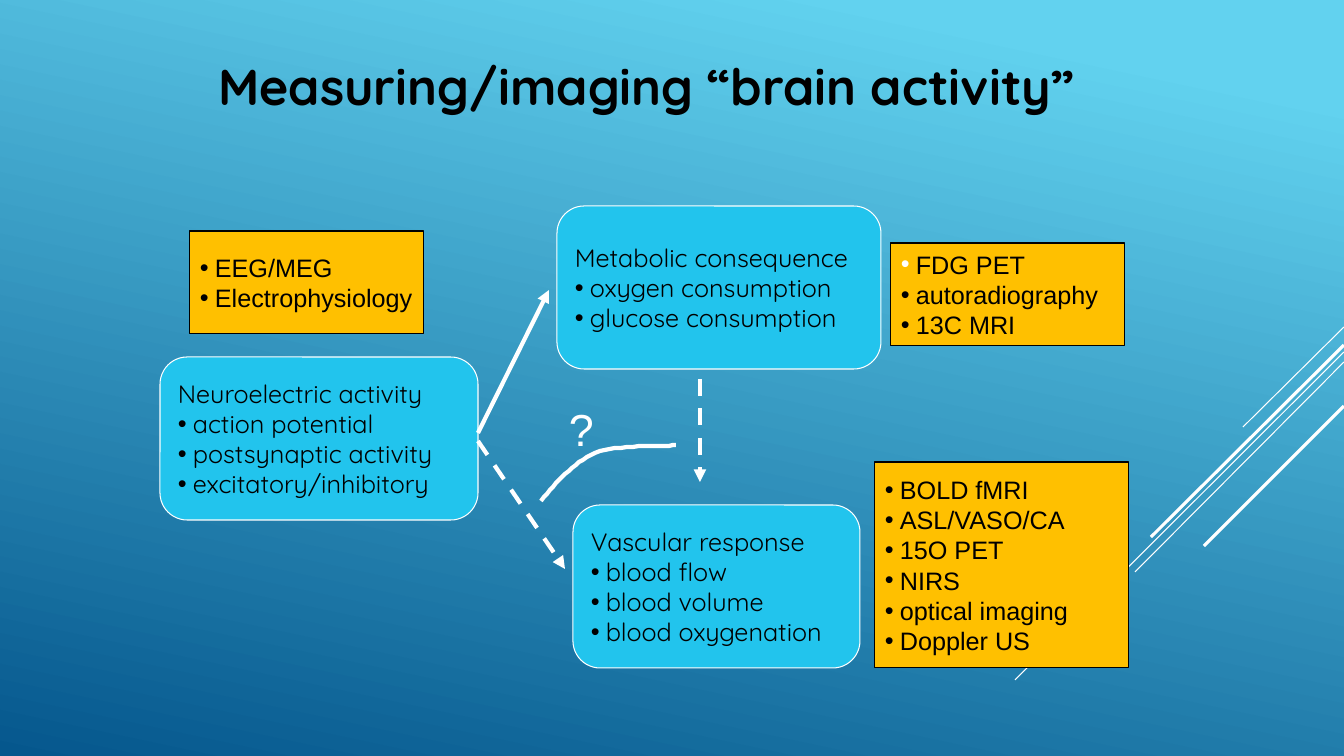
from lxml import etree
from pptx import Presentation
from pptx import util as u
from pptx.dml.color import RGBColor
from pptx.enum import dml, shapes, text
from pptx.oxml.ns import qn

EMU_PER_PX = 12192000 / 1344
COLORS = {"sky": "62D2EF", "deep": "05578D", "process": "22C4ED",
          "method": "FFC000", "black": "000000", "white": "FFFFFF"}
rgb = {name: RGBColor.from_string(value) for name, value in COLORS.items()}


def px(*lengths):
    return [u.Emu(round(n * EMU_PER_PX)) for n in lengths]


def draw_line(ends, width, dashed=False, arrow=False):
    link = slide.shapes.add_connector(shapes.MSO_CONNECTOR.STRAIGHT, *px(*ends))
    link.line.color.rgb = rgb["white"]
    link.line.width = u.Pt(width)
    if dashed:
        link.line.dash_style = dml.MSO_LINE.DASH
    if arrow:
        etree.SubElement(link.line._get_or_add_ln(), qn("a:tailEnd"), type="triangle")
    etree.SubElement(link._element.spPr, qn("a:effectLst"))


prs = Presentation()
prs.slide_width, prs.slide_height = px(1344, 756)
slide = prs.slides.add_slide(prs.slide_layouts[6])

backdrop = slide.background.fill
backdrop.gradient()
backdrop.gradient_angle = 258
for stop, position, name in zip(backdrop.gradient_stops, (0.1, 1), ("sky", "deep")):
    stop.position = position
    stop.color.rgb = rgb[name]

for *ends, width in [
    (1344, 327, 1243, 427, 0.75),
    (1344, 352, 1015, 680, 0.75),
    (1344, 362, 1135, 572, 0.75),
    (1344, 345, 1151, 537, 2.25),
    (1344, 406, 1204, 546, 2.25),
]:
    draw_line(ends, width)

bend_start = (541, 501)
bends = [
    (bend_start, (556, 482), (573, 463), (595, 453)),
    ((595, 453), (618, 444), (662, 447), (676, 445)),
]
bend_points = []
for a, b, c, d in bends:
    for step in range(1, 17):
        t = step / 16
        s = 1 - t
        bend_points.append([s**3 * a[i] + 3 * s * s * t * b[i] + 3 * s * t * t * c[i] + t**3 * d[i]
                            for i in (0, 1)])
builder = slide.shapes.build_freeform(*bend_start, scale=EMU_PER_PX)
builder.add_line_segments(bend_points, close=False)
coupling = builder.convert_to_shape()
coupling.shadow.inherit = False
coupling.fill.background()
coupling.line.color.rgb = rgb["white"]
coupling.line.width = u.Pt(3)

for place, words, font, size, color, bold in [
    ((79, 50, 1084, 57), "Measuring/imaging “brain activity”", "Quicksand", 36, "black", True),
    ((559, 397, 45, 64), "?", "Arial", 32, "white", False),
]:
    label = slide.shapes.add_textbox(*px(*place)).text_frame
    label.word_wrap = True
    label.text = words
    line = label.paragraphs[0]
    line.font.name, line.font.size, line.font.bold = font, u.Pt(size), bold
    line.font.color.rgb = rgb[color]
    if bold:
        line.alignment = text.PP_ALIGN.CENTER
        line._p.get_or_add_pPr().set("marL", str(u.Inches(0.5)))

boxes = [
    ((160, 357, 318, 163), "Neuroelectric activity",
     ["action potential", "postsynaptic activity", "excitatory/inhibitory"]),
    ((573, 505, 287, 163), "Vascular response",
     ["blood flow", "blood volume", "blood oxygenation"]),
    ((557, 206, 324, 163), "Metabolic consequence",
     ["oxygen consumption", "glucose consumption"]),
    ((190, 231, 234, 103), None, ["EEG/MEG", "Electrophysiology"]),
    ((891, 243, 234, 103), None, ["FDG PET", "autoradiography", "13C MRI"]),
    ((875, 462, 254, 206), None,
     ["BOLD fMRI", "ASL/VASO/CA", "15O PET", "NIRS", "optical imaging", "Doppler US"]),
]
bullet_indent = px(15)[0]
for place, heading, items in boxes:
    outline = shapes.MSO_SHAPE.ROUNDED_RECTANGLE if heading else shapes.MSO_SHAPE.RECTANGLE
    box = slide.shapes.add_shape(outline, *px(*place))
    box.shadow.inherit = False
    box.fill.solid()
    box.fill.fore_color.rgb = rgb["process" if heading else "method"]
    box.line.color.rgb = rgb["white" if heading else "black"]
    box.line.width = u.Pt(0.75)
    frame = box.text_frame
    frame.word_wrap = True
    frame.vertical_anchor = text.MSO_ANCHOR.MIDDLE
    frame.text = "\n".join(([heading] if heading else []) + items)
    for entry in frame.paragraphs:
        entry.alignment = text.PP_ALIGN.LEFT
        entry.font.name = "Quicksand" if heading else "Arial"
        entry.font.size = u.Pt(18)
        entry.font.color.rgb = rgb["black"]
        if entry.text == heading:
            continue
        props = entry._p.get_or_add_pPr()
        props.set("marL", str(bullet_indent))
        props.set("indent", str(-bullet_indent))
        tint = etree.Element(qn("a:buClr"))
        bullet_color = COLORS["white" if entry.text == "FDG PET" else "black"]
        etree.SubElement(tint, qn("a:srgbClr"), val=bullet_color)
        props.insert(0, tint)
        props.insert(1, etree.Element(qn("a:buFont"), typeface="Arial"))
        props.insert(2, etree.Element(qn("a:buChar"), char="•"))

for ends, dashed in [
    ((478, 433, 549, 290), False),
    ((478, 441, 565, 569), True),
    ((700, 379, 700, 482), True),
]:
    draw_line(ends, 3, dashed, arrow=True)

prs.save("out.pptx")
